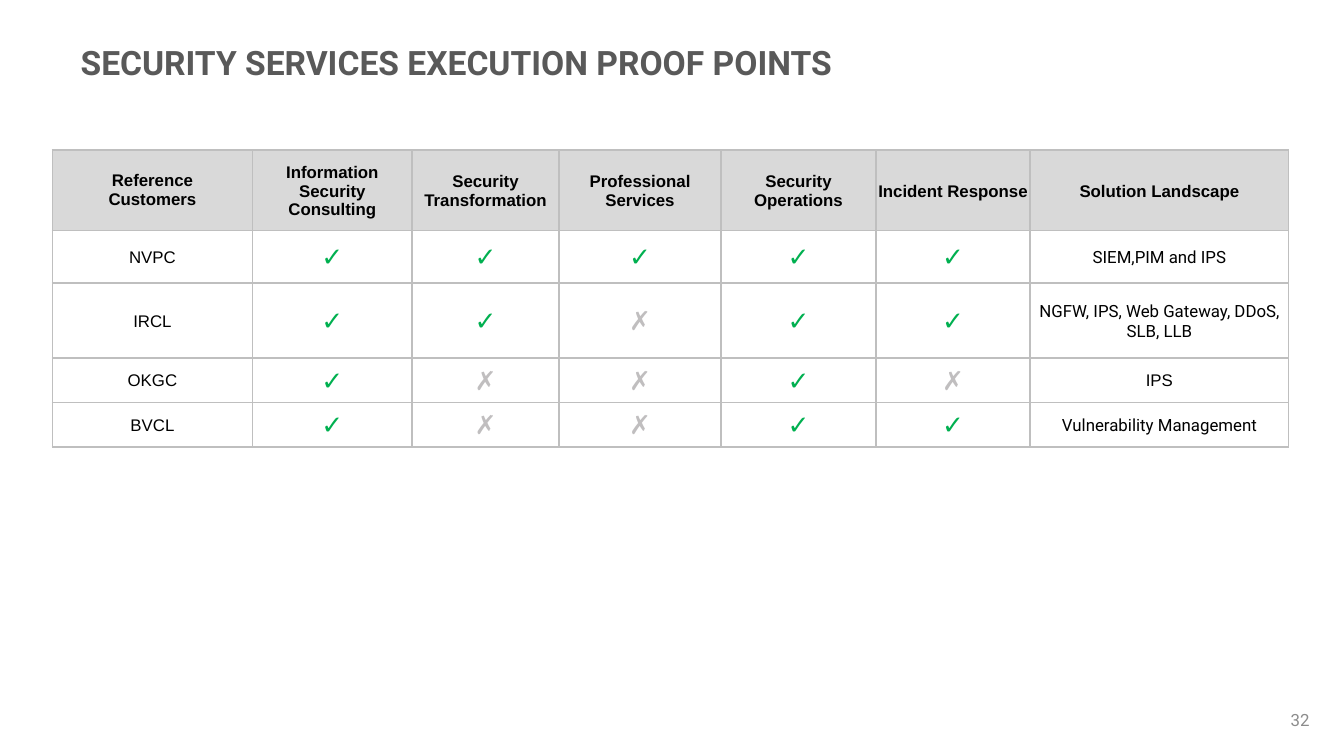
from lxml.etree import SubElement
from pptx import Presentation
from pptx.dml.color import RGBColor
from pptx.enum.text import MSO_ANCHOR, MSO_AUTO_SIZE, PP_ALIGN
from pptx.oxml.ns import qn
from pptx.util import Cm, Pt

HUES = {
    "title": "595959",
    "page": "8C8C8C",
    "text": "000000",
    "head": "D9D9D9",
    "line": "BFBFBF",
    "yes": "00B050",
    "no": "C0BEBF",
}
MARKS = {"✓": "yes", "✗": "no"}
COLS = [3.78, 3.02, 2.77, 3.07, 2.92, 2.92, 4.88]
ROWS = [1.52, 0.99, 1.42, 0.84, 0.84]
HEADS = [
    "Reference Customers", "Information Security Consulting",
    "Security Transformation", "Professional Services",
    "Security Operations", "Incident Response", "Solution Landscape",
]
CLIENTS = [
    ("NVPC", "✓✓✓✓✓", "SIEM,PIM and IPS", "Roboto"),
    ("IRCL", "✓✓✗✓✓", "NGFW, IPS, Web Gateway, DDoS, SLB, LLB", "Roboto"),
    ("OKGC", "✓✗✗✓✗", "IPS", "Arial"),
    ("BVCL", "✓✗✗✓✓", "Vulnerability Management", "Roboto"),
]


def assign(item, values):
    for name, value in values.items():
        setattr(item, name, value)


def write(frame, text, hue, align=PP_ALIGN.CENTER, **style):
    frame.text = text
    para = frame.paragraphs[0]
    para.alignment = align
    font = para.runs[0].font
    assign(font, {"name": "Arial", "size": Pt(9), "bold": False, **style})
    font.color.rgb = RGBColor.from_string(HUES[hue])


def place(shape, left, top, width, height):
    assign(shape, {"left": Cm(left), "top": Cm(top),
                   "width": Cm(width), "height": Cm(height)})


def add_title(slide, text):
    title = slide.shapes.title
    place(title, 1.27, 0.66, 20.32, 1.02)
    frame = title.text_frame
    assign(frame, {"word_wrap": True, "vertical_anchor": MSO_ANCHOR.TOP,
                   "auto_size": MSO_AUTO_SIZE.SHAPE_TO_FIT_TEXT})
    write(frame, text, "title", PP_ALIGN.LEFT,
          name="Roboto", size=Pt(18), bold=True)


def add_page(slide, text):
    box = slide.shapes.add_textbox(Cm(19.28), Cm(13.23), Cm(5.72), Cm(0.76))
    frame = box.text_frame
    assign(frame, {"word_wrap": True, "vertical_anchor": MSO_ANCHOR.MIDDLE})
    write(frame, text, "page", PP_ALIGN.RIGHT, name="Roboto")


def edge(cell):
    props = cell._tc.get_or_add_tcPr()
    for side in ("lnL", "lnR", "lnT", "lnB"):
        line = SubElement(props, qn(f"a:{side}"), w=str(Pt(1)))
        fill = SubElement(line, qn("a:solidFill"))
        SubElement(fill, qn("a:srgbClr"), val=HUES["line"])


def fill_cell(cell, text, head, name):
    edge(cell)
    assign(cell, {"vertical_anchor": MSO_ANCHOR.MIDDLE,
                  "margin_left": Cm(0.03), "margin_right": Cm(0.03),
                  "margin_top": Cm(0.03), "margin_bottom": 0})
    if head:
        cell.fill.solid()
        cell.fill.fore_color.rgb = RGBColor.from_string(HUES["head"])
    else:
        cell.fill.background()
    size = Pt(14) if text in MARKS else Pt(9)
    write(cell.text_frame, text, MARKS.get(text, "text"),
          name=name, size=size, bold=head)


def add_grid(slide):
    frame = slide.shapes.add_table(len(ROWS), len(COLS), Cm(0.99), Cm(2.84),
                                   Cm(sum(COLS)), Cm(sum(ROWS)))
    table = frame.table
    assign(table, {"first_row": False, "horz_banding": False})
    for col, width in zip(table.columns, COLS):
        col.width = Cm(width)
    for row, height in zip(table.rows, ROWS):
        row.height = Cm(height)
    lines = [(HEADS, "Arial")]
    lines += [([who, *marks, scope], face) for who, marks, scope, face in CLIENTS]
    for r, (texts, face) in enumerate(lines):
        for c, text in enumerate(texts):
            name = face if c == len(COLS) - 1 else "Arial"
            fill_cell(table.cell(r, c), text, r == 0, name)
    assign(table.cell(0, 0), {"margin_left": Cm(0.25), "margin_right": Cm(0.25),
                              "margin_top": Cm(0.13), "margin_bottom": Cm(0.13)})


def main():
    deck = Presentation()
    assign(deck, {"slide_width": Cm(25.4), "slide_height": Cm(14.29)})
    slide = deck.slides.add_slide(deck.slide_layouts[5])
    add_title(slide, "SECURITY SERVICES EXECUTION PROOF POINTS")
    add_grid(slide)
    add_page(slide, "32")
    deck.save("out.pptx")


if __name__ == "__main__":
    main()
